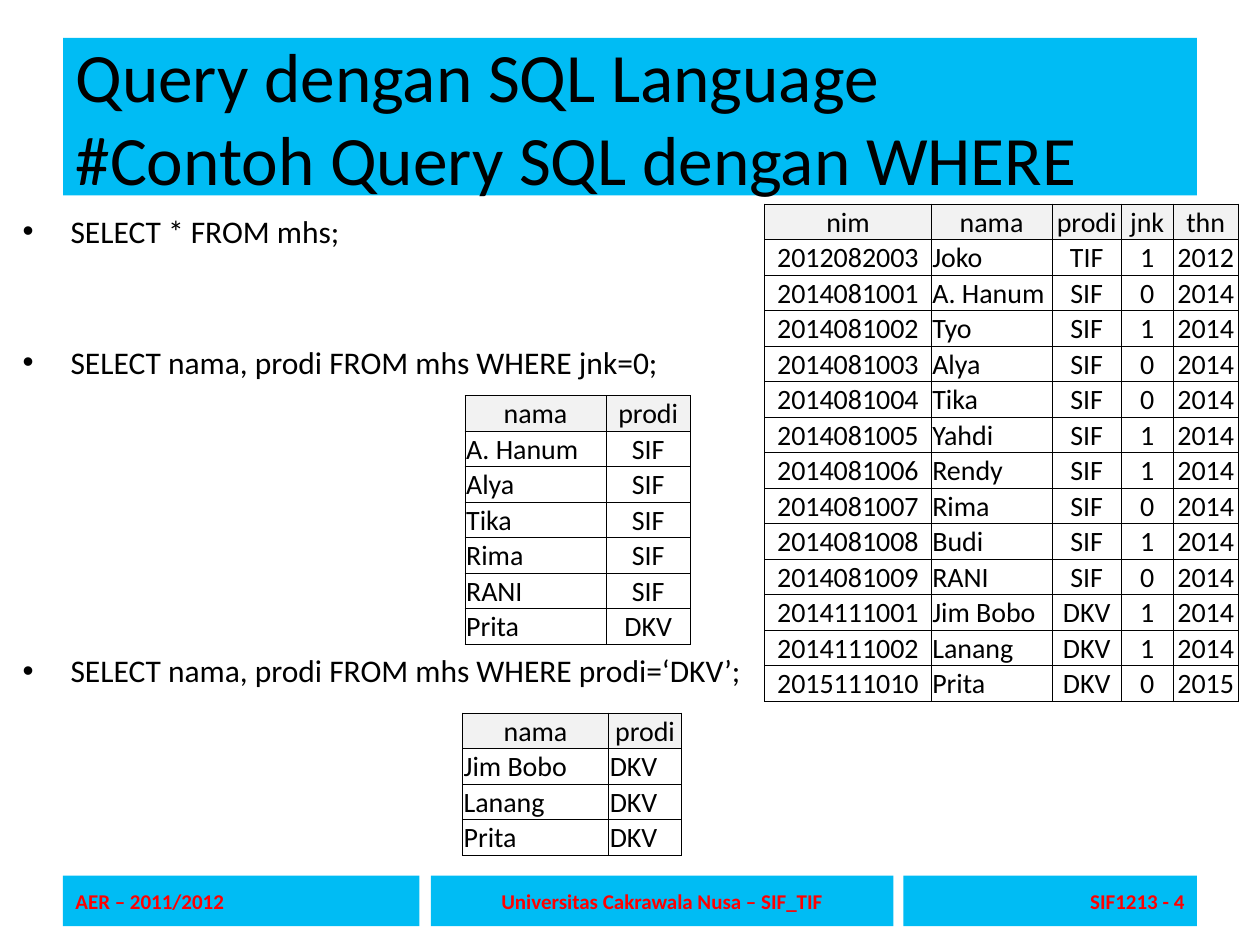
from lxml.etree import SubElement
from pptx import Presentation
from pptx.dml.color import RGBColor
from pptx.enum.shapes import MSO_SHAPE as Shape
from pptx.enum.text import MSO_ANCHOR as Anchor, MSO_AUTO_SIZE as Auto, PP_ALIGN as Align
from pptx.oxml.ns import qn
from pptx.util import Inches, Pt

CYAN = RGBColor(0x00, 0xBC, 0xF4)
GRAY = RGBColor(0xF2, 0xF2, 0xF2)
BLACK = RGBColor(0, 0, 0)
RED = RGBColor(0xFF, 0, 0)


def write(par, text, size=16, color=BLACK, bold=False, align=Align.LEFT):
    par.text = text
    par.alignment = align
    for run in par.runs:
        font = run.font
        font.name, font.size, font.bold = "Calibri", Pt(size), bold
        font.color.rgb = color


def grid(left, top, widths, aligns, rows, anchor):
    """Add a bordered table with a gray, centred header row."""
    high = 0.28
    frame = slide.shapes.add_table(
        len(rows), len(widths), Inches(left), Inches(top),
        Inches(sum(widths)), Inches(high * len(rows)))
    table = frame.table
    table.first_row = table.horz_banding = False
    for col, width in zip(table.columns, widths):
        col.width = Inches(width)
    for r, row in enumerate(rows):
        table.rows[r].height = Inches(high)
        for c, text in enumerate(row):
            cell = table.cell(r, c)
            cell.margin_left = cell.margin_right = cell.margin_top = Inches(0.01)
            cell.margin_bottom = 0
            cell.vertical_anchor = anchor if r else Anchor.BOTTOM
            write(cell.text_frame.paragraphs[0], text,
                  align=aligns[c] if r else Align.CENTER)
            props = cell._tc.get_or_add_tcPr()
            for side in ("a:lnL", "a:lnR", "a:lnT", "a:lnB"):
                line = SubElement(props, qn(side), w=str(Pt(0.5)))
                fill = SubElement(line, qn("a:solidFill"))
                SubElement(fill, qn("a:srgbClr"), val=str(BLACK))
            if r:
                cell.fill.background()
            else:
                cell.fill.solid()
                cell.fill.fore_color.rgb = GRAY


deck = Presentation()
deck.slide_width, deck.slide_height = Inches(10), Inches(7.5)
slide = deck.slides.add_slide(deck.slide_layouts[1])

# Title
title = slide.shapes.title
title.left, title.top = Inches(0.5), Inches(0.3)
title.width, title.height = Inches(9), Inches(1.25)
title.fill.solid()
title.fill.fore_color.rgb = CYAN
title.text_frame.auto_size = Auto.NONE
title.text_frame.vertical_anchor = Anchor.MIDDLE
write(title.text_frame.paragraphs[0],
      "Query dengan SQL Language\v#Contoh Query SQL dengan WHERE", size=39.6)

# Queries, spaced to leave room for their results
body = slide.placeholders[1]
body.left, body.top = Inches(0.08), Inches(1.63)
body.width, body.height = Inches(9), Inches(4.95)
frame = body.text_frame
frame.auto_size = Auto.NONE
queries = [
    ("SELECT * FROM mhs;", 0),
    ("SELECT nama, prodi FROM mhs WHERE jnk=0;", 53.5),
    ("SELECT nama, prodi FROM mhs WHERE prodi=‘DKV’;", 154.5),
]
for i, (text, gap) in enumerate(queries):
    par = frame.add_paragraph() if i else frame.paragraphs[0]
    write(par, text, size=18)
    par.space_before = Pt(gap)
    props = par._p.get_or_add_pPr()
    props.set("marL", str(Inches(0.38)))
    props.set("indent", str(-Inches(0.38)))
    SubElement(props, qn("a:buChar"), char="•")

# Footer
footer = [
    (0.5, 2.83, "AER – 2011/2012", Align.LEFT),
    (3.42, 3.67, "Universitas Cakrawala Nusa – SIF_TIF", Align.CENTER),
    (7.17, 2.33, "SIF1213 - 4", Align.RIGHT),
]
for left, width, text, align in footer:
    bar = slide.shapes.add_shape(
        Shape.RECTANGLE, Inches(left), Inches(6.95), Inches(width), Inches(0.4))
    bar.shadow.inherit = False
    bar.fill.solid()
    bar.fill.fore_color.rgb = CYAN
    bar.line.fill.background()
    bar.text_frame.vertical_anchor = Anchor.MIDDLE
    write(bar.text_frame.paragraphs[0], text, size=12, color=RED, bold=True, align=align)

# All students, then the result of each filter
students = [
    ("nim", "nama", "prodi", "jnk", "thn"),
    ("2012082003", "Joko", "TIF", "1", "2012"),
    ("2014081001", "A. Hanum", "SIF", "0", "2014"),
    ("2014081002", "Tyo", "SIF", "1", "2014"),
    ("2014081003", "Alya", "SIF", "0", "2014"),
    ("2014081004", "Tika", "SIF", "0", "2014"),
    ("2014081005", "Yahdi", "SIF", "1", "2014"),
    ("2014081006", "Rendy", "SIF", "1", "2014"),
    ("2014081007", "Rima", "SIF", "0", "2014"),
    ("2014081008", "Budi", "SIF", "1", "2014"),
    ("2014081009", "RANI", "SIF", "0", "2014"),
    ("2014111001", "Jim Bobo", "DKV", "1", "2014"),
    ("2014111002", "Lanang", "DKV", "1", "2014"),
    ("2015111010", "Prita", "DKV", "0", "2015"),
]
head, *data = students
women = [row[1:3] for row in data if row[3] == "0"]
design = [row[1:3] for row in data if row[2] == "DKV"]
L, C = Align.LEFT, Align.CENTER
grid(6.07, 1.62, (1.32, 0.96, 0.55, 0.41, 0.52), (C, L, C, C, C), students, Anchor.BOTTOM)
grid(3.69, 3.14, (1.12, 0.67), (L, C), [head[1:3], *women], Anchor.MIDDLE)
grid(3.67, 5.66, (1.16, 0.58), (L, L), [head[1:3], *design], Anchor.MIDDLE)

deck.save("out.pptx")
